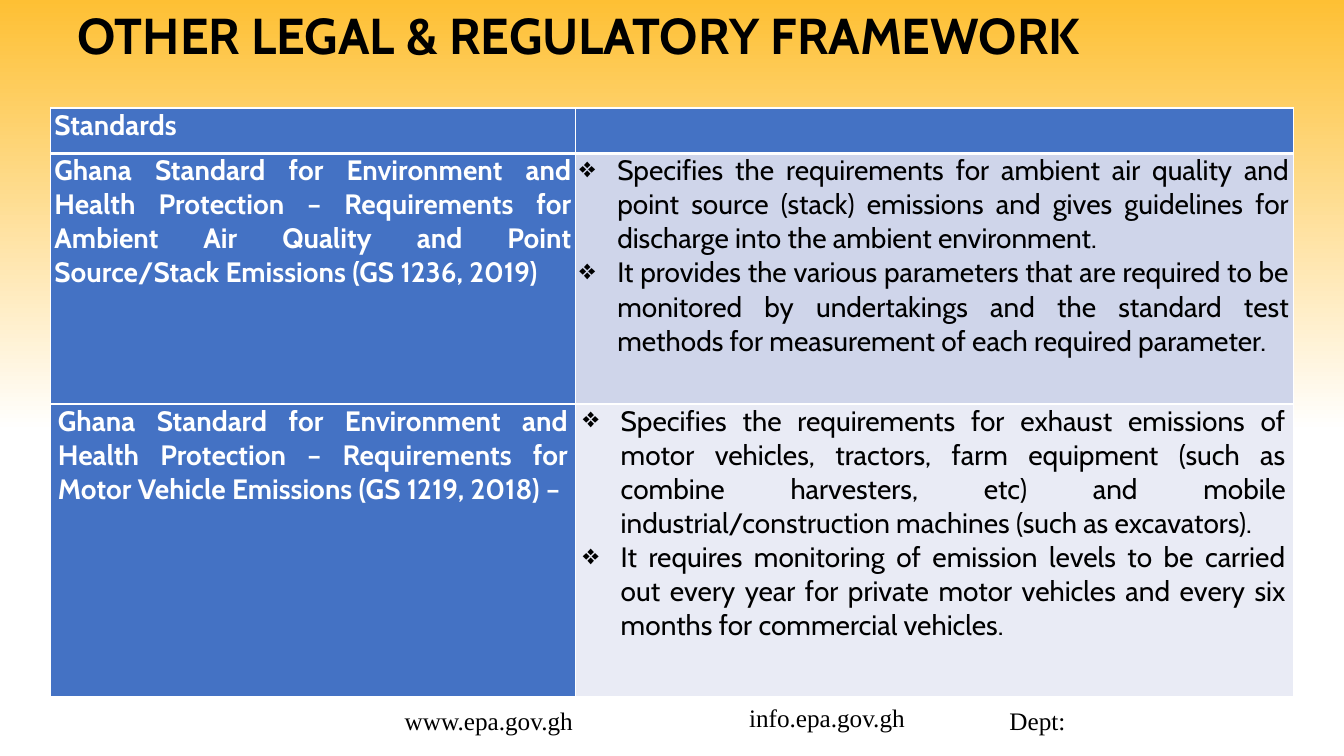
"""Build the slide on the legal and regulatory framework for emissions."""
from dataclasses import dataclass

from lxml.etree import SubElement
from pptx import Presentation
from pptx.dml.color import RGBColor
from pptx.enum.text import MSO_ANCHOR as Anchor, MSO_AUTO_SIZE as AutoSize, PP_ALIGN as Align
from pptx.oxml.ns import qn
from pptx.util import Pt

COLORS = {
    "gold": "FEC034",
    "white": "FFFFFF",
    "black": "000000",
    "blue": "4472C4",
    "band_dark": "CFD5EA",
    "band_light": "E9EBF5",
}
HEADING_FONT = "Cabin"
FOOTER_FONT = "Times New Roman"
BULLET_INDENT = Pt(27)
COLUMN_WIDTHS = (375, 512.8)


@dataclass(frozen=True)
class StandardRow:
    height: float
    margin: float
    name: str
    details: tuple[str, ...]
    detail_fill: str
    top_line: float = 1
    bottom_line: float = 1


@dataclass(frozen=True)
class FooterLabel:
    text: str
    left: float
    top: float
    width: float


ROWS = (
    StandardRow(32.4, 2.9, "Standards", (), "blue", bottom_line=3),
    StandardRow(
        179, 2.9,
        "Ghana Standard for Environment and Health Protection – Requirements for "
        "Ambient Air Quality and Point Source/Stack Emissions (GS 1236, 2019)",
        (
            "Specifies the requirements for ambient air quality and point source (stack) "
            "emissions and gives guidelines for discharge into the ambient environment.",
            "It provides the various parameters that are required to be monitored by undertakings "
            "and the standard test methods for measurement of each required parameter.",
        ),
        "band_dark", top_line=3,
    ),
    StandardRow(
        209.3, 5.4,
        "Ghana Standard for Environment and Health Protection – Requirements for "
        "Motor Vehicle Emissions (GS 1219, 2018) –",
        (
            "Specifies the requirements for exhaust emissions of motor vehicles, tractors, farm "
            "equipment (such as combine harvesters, etc) and mobile industrial/construction "
            "machines (such as excavators).",
            "It requires monitoring of emission levels to be carried out every year for private "
            "motor vehicles and every six months for commercial vehicles.",
        ),
        "band_light",
    ),
)

FOOTER = (
    FooterLabel("www.epa.gov.gh", 282, 500.4, 156),
    FooterLabel("info.epa.gov.gh", 528, 498.2, 144),
    FooterLabel("Dept:", 714, 500.4, 180),
)


def rgb(name: str) -> RGBColor:
    return RGBColor.from_string(COLORS[name])


def add_run(paragraph, text: str, font_name: str, size: float, color: str, bold: bool = False) -> None:
    run = paragraph.add_run()
    run.text = text
    run.font.name = font_name
    run.font.size = Pt(size)
    run.font.bold = bold
    run.font.color.rgb = rgb(color)


def add_bullet(paragraph) -> None:
    properties = paragraph._p.get_or_add_pPr()
    properties.set("marL", str(BULLET_INDENT))
    properties.set("indent", str(-BULLET_INDENT))
    SubElement(properties, qn("a:buChar"), char="❖")


def add_borders(cell, row: StandardRow) -> None:
    properties = cell._tc.get_or_add_tcPr()
    widths = {"lnL": 1, "lnR": 1, "lnT": row.top_line, "lnB": row.bottom_line}
    for side, width in widths.items():
        line = SubElement(properties, qn(f"a:{side}"), w=str(Pt(width)))
        fill = SubElement(line, qn("a:solidFill"))
        SubElement(fill, qn("a:srgbClr"), val=COLORS["white"])


def fill_cell(cell, row: StandardRow, texts: tuple[str, ...], fill: str, is_detail: bool) -> None:
    add_borders(cell, row)
    cell.fill.solid()
    cell.fill.fore_color.rgb = rgb(fill)
    cell.margin_left = cell.margin_right = Pt(row.margin)
    cell.margin_top = cell.margin_bottom = Pt(0)
    frame = cell.text_frame
    for index, text in enumerate(texts):
        paragraph = frame.add_paragraph() if index else frame.paragraphs[0]
        paragraph.alignment = Align.JUSTIFY
        if is_detail:
            add_bullet(paragraph)
        add_run(paragraph, text, HEADING_FONT, 20, "black" if is_detail else "white", not is_detail)


def add_standards_table(slide) -> None:
    height = sum(row.height for row in ROWS)
    shape = slide.shapes.add_table(
        len(ROWS), len(COLUMN_WIDTHS), Pt(36), Pt(77.2), Pt(sum(COLUMN_WIDTHS)), Pt(height)
    )
    table = shape.table
    for column, width in zip(table.columns, COLUMN_WIDTHS):
        column.width = Pt(width)
    for index, row in enumerate(ROWS):
        table.rows[index].height = Pt(row.height)
        fill_cell(table.cell(index, 0), row, (row.name,), "blue", False)
        fill_cell(table.cell(index, 1), row, row.details, row.detail_fill, True)


def add_footer_label(slide, label: FooterLabel) -> None:
    box = slide.shapes.add_textbox(Pt(label.left), Pt(label.top), Pt(label.width), Pt(29))
    box.text_frame.word_wrap = True
    add_run(box.text_frame.paragraphs[0], label.text, FOOTER_FONT, 18, "black")


def set_title(slide, text: str) -> None:
    title = slide.shapes.title
    title.left, title.top, title.width, title.height = Pt(48), Pt(0), Pt(882), Pt(54)
    frame = title.text_frame
    frame.auto_size = AutoSize.NONE
    frame.vertical_anchor = Anchor.MIDDLE
    paragraph = frame.paragraphs[0]
    paragraph.alignment = Align.LEFT
    paragraph.line_spacing = 0.9
    add_run(paragraph, text, HEADING_FONT, 36, "black", True)


def set_background(slide) -> None:
    fill = slide.background.fill
    fill.gradient()
    fill.gradient_angle = 270
    for stop, position, color in zip(fill.gradient_stops, (0, 0.57), ("gold", "white")):
        stop.position = position
        stop.color.rgb = rgb(color)


def main() -> None:
    presentation = Presentation()
    presentation.slide_width, presentation.slide_height = Pt(960), Pt(540)
    slide = presentation.slides.add_slide(presentation.slide_layouts[5])
    set_background(slide)
    for label in FOOTER:
        add_footer_label(slide, label)
    add_standards_table(slide)
    set_title(slide, "OTHER LEGAL & REGULATORY FRAMEWORK")
    presentation.save("out.pptx")


if __name__ == "__main__":
    main()
